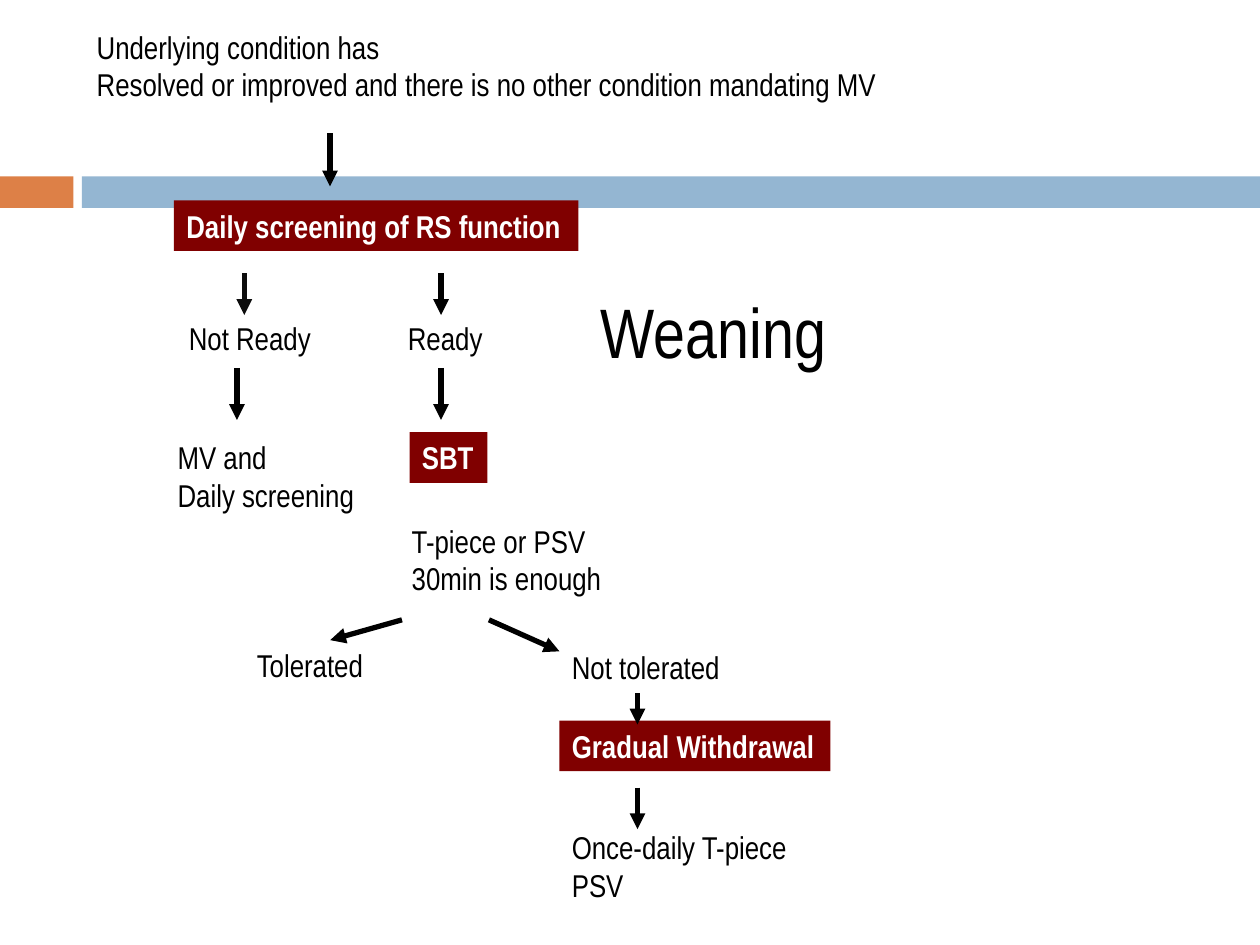
import pptx
import pptx.util
import pptx.dml.color
import pptx.enum.shapes
import pptx.enum.text
import pptx.oxml
from dataclasses import dataclass

Pt = pptx.util.Pt
RGB = pptx.dml.color.RGBColor.from_string


@dataclass(frozen=True)
class Theme:
    font: str = "Arial Narrow"
    body: int = 18
    title: int = 40
    ink: str = "000000"
    pale: str = "FFFFFF"
    mark: str = "800000"
    soft: str = "0D0D0D"
    warm: str = "DD8047"
    cool: str = "94B6D2"
    line: int = 3


THEME = Theme()


def block(slide, x, y, w, h, color):
    kind = pptx.enum.shapes.MSO_SHAPE.RECTANGLE
    shape = slide.shapes.add_shape(kind, Pt(x), Pt(y), Pt(w), Pt(h))
    shape.shadow.inherit = False
    shape.fill.solid()
    shape.fill.fore_color.rgb = RGB(color)
    shape.line.fill.background()
    return shape


def label(slide, x, y, w, *lines, size=THEME.body, key=False):
    """Place text lines; a key label is bold on a filled box."""
    h = 7.2 + 1.21 * size * len(lines)
    if key:
        shape = block(slide, x, y, w, h, THEME.mark)
    else:
        shape = slide.shapes.add_textbox(Pt(x), Pt(y), Pt(w), Pt(h))
    frame = shape.text_frame
    frame.word_wrap = False
    frame.auto_size = pptx.enum.text.MSO_AUTO_SIZE.SHAPE_TO_FIT_TEXT
    frame.vertical_anchor = pptx.enum.text.MSO_ANCHOR.TOP
    frame.text = "\n".join(lines)
    for para in frame.paragraphs:
        para.alignment = pptx.enum.text.PP_ALIGN.LEFT
        para.font.name = THEME.font
        para.font.size = Pt(size)
        para.font.bold = key
        para.font.color.rgb = RGB(THEME.pale if key else THEME.ink)


def arrow(slide, x, y, dx, dy, color=THEME.ink):
    kind = pptx.enum.shapes.MSO_CONNECTOR.STRAIGHT
    link = slide.shapes.add_connector(kind, Pt(x), Pt(y), Pt(x + dx), Pt(y + dy))
    link.line.width = Pt(THEME.line)
    link.line.color.rgb = RGB(color)
    tail = pptx.oxml.parse_xml(
        '<a:tailEnd xmlns:a="http://schemas.openxmlformats.org/'
        'drawingml/2006/main" type="triangle"/>')
    link.line._get_or_add_ln().append(tail)
    props = link._element.spPr
    props.append(props.makeelement(pptx.oxml.ns.qn("a:effectLst"), {}))


def band(slide, x, y, w, h):
    tab, gap = 42, 4.8
    block(slide, x, y, tab, h, THEME.warm)
    block(slide, x + tab + gap, y, w - tab - gap, h, THEME.cool)


def intro(slide, x, y, w):
    label(slide, x, y, w, "Underlying condition has",
          "Resolved or improved and there is no other condition mandating MV")
    arrow(slide, x + 140.4, y + 64, 0, 30.3)


def screen(slide, x, y, w):
    """Daily screening and its two outcomes."""
    label(slide, x, y, w, "Daily screening of RS function", key=True)
    label(slide, x + 1.4, y + 64, 85, "Not Ready")
    label(slide, x + 126.6, y + 64, 58, "Ready")
    label(slide, x - 5, y + 132.5, 116.6, "MV and", "Daily screening")
    arrow(slide, x + 40.2, y + 41.7, 0, 23.8, THEME.soft)
    arrow(slide, x + 36, y + 95.7, 0, 29.8)
    for top, drop in ((41.7, 23.8), (95.7, 29.8)):
        arrow(slide, x + 152.6, y + top, 0, drop)


def trial(slide, x, y, w):
    """Breathing trial and its good outcome."""
    label(slide, x, y, w, "SBT", key=True)
    label(slide, x - 5.8, y + 47.5, 128.2, "T-piece or PSV", "30min is enough")
    label(slide, x - 94.3, y + 118.8, 76.3, "Tolerated")
    arrow(slide, x - 4.3, y + 107.2, -41, 11.6)
    arrow(slide, x + 45.4, y + 107.2, 40.3, 18)


def wean(slide, x, y, w):
    """Steps after a trial that was not tolerated."""
    label(slide, x, y, 100.1, "Not tolerated")
    label(slide, x, y + 45.3, w, "Gradual Withdrawal", key=True)
    label(slide, x, y + 103, 139, "Once-daily T-piece", "PSV")
    arrow(slide, x + 44.6, y + 29.5, 0, 18)
    arrow(slide, x + 44.6, y + 83.5, 0, 23.8)


def main():
    deck = pptx.Presentation()
    deck.slide_width, deck.slide_height = Pt(720), Pt(540)
    slide = deck.slides.add_slide(deck.slide_layouts[6])
    band(slide, 0, 100.8, 720, 18)
    intro(slide, 48.2, 12.2, 465.8)
    screen(slide, 99.4, 114.5, 231.1)
    trial(slide, 234, 247, 44.6)
    wean(slide, 319.7, 366.5, 154.8)
    label(slide, 336.2, 161.3, 144.7, "Weaning", size=THEME.title)
    deck.save("out.pptx")


if __name__ == "__main__":
    main()
